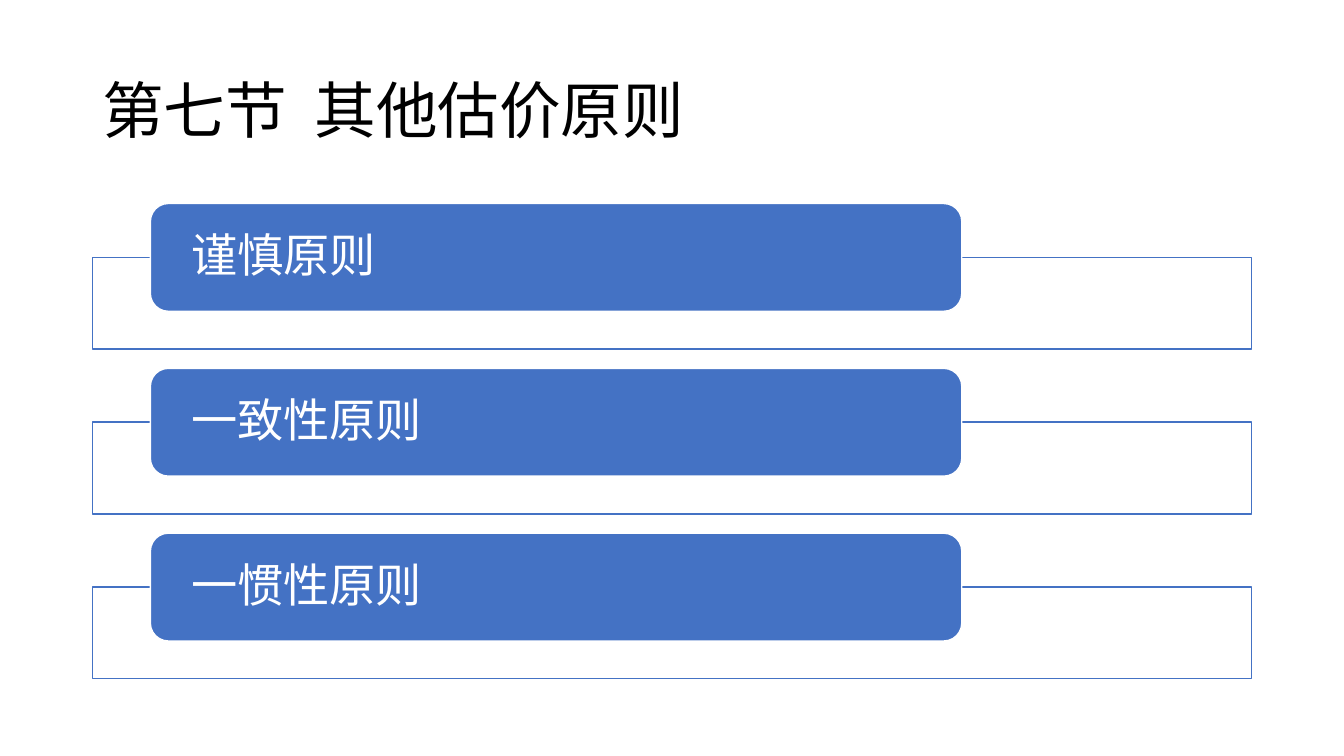
from lxml.etree import SubElement
from pptx import Presentation
from pptx.dml.color import RGBColor
from pptx.enum.shapes import MSO_SHAPE as Preset
from pptx.enum.text import MSO_ANCHOR as Anchor, PP_ALIGN as Align
from pptx.oxml.ns import qn
from pptx.util import Pt

COLORS = {"black": "000000", "white": "FFFFFF", "blue": "4472C4"}
FONT = "Noto Sans CJK SC"
PRINCIPLES = ["谨慎原则", "一致性原则", "一惯性原则"]


def color(name):
    """Return the named colour."""
    return RGBColor.from_string(COLORS[name])


def write_text(shape, text, size, color_name, inset_x, inset_y):
    """Write one left-aligned, vertically centred line into a shape."""
    frame = shape.text_frame
    frame.word_wrap = True
    frame.vertical_anchor = Anchor.MIDDLE
    frame.margin_left = frame.margin_right = Pt(inset_x)
    frame.margin_top = frame.margin_bottom = Pt(inset_y)
    paragraph = frame.paragraphs[0]
    paragraph.alignment = Align.LEFT
    paragraph.line_spacing = 0.9
    run = paragraph.add_run()
    run.text = text
    run.font.size = Pt(size)
    run.font.name = FONT
    run.font.color.rgb = color(color_name)
    SubElement(run.font._element, qn("a:ea"), typeface=FONT)


def add_box(slide, preset, left, top, width, height, fill, line):
    """Add a filled and outlined shape without shadow."""
    shape = slide.shapes.add_shape(preset, Pt(left), Pt(top), Pt(width), Pt(height))
    shape.shadow.inherit = False
    shape.fill.solid()
    shape.fill.fore_color.rgb = color(fill)
    shape.line.color.rgb = color(line)
    shape.line.width = Pt(1)
    return shape


def add_title(slide, left, top, width, height):
    """Add the section heading."""
    title = slide.shapes.add_textbox(Pt(left), Pt(top), Pt(width), Pt(height))
    write_text(title, "第七节  其他估价原则", 44, "black", 7.2, 3.6)


def add_principles(slide, left, top, width, height):
    """Stack one frame with an overlapping label per principle."""
    label_height, frame_drop, frame_height = 77, 38.4, 65.5
    pitch = (height - frame_drop - frame_height) / (len(PRINCIPLES) - 1)
    for index, principle in enumerate(PRINCIPLES):
        row_top = top + index * pitch
        add_box(slide, Preset.RECTANGLE, left, row_top + frame_drop,
                width, frame_height, "white", "blue")
        label = add_box(slide, Preset.ROUNDED_RECTANGLE, left + width * 0.05, row_top,
                        width * 0.7, label_height, "blue", "white")
        write_text(label, principle, 33, "white", 25.4, 0)


def main():
    """Build and save the slide."""
    presentation = Presentation()
    presentation.slide_width, presentation.slide_height = Pt(960), Pt(540)
    slide = presentation.slides.add_slide(presentation.slide_layouts[6])
    add_title(slide, 66, 28.8, 828, 104.4)
    add_principles(slide, 66, 145.4, 828, 339.4)
    presentation.save("out.pptx")


if __name__ == "__main__":
    main()
